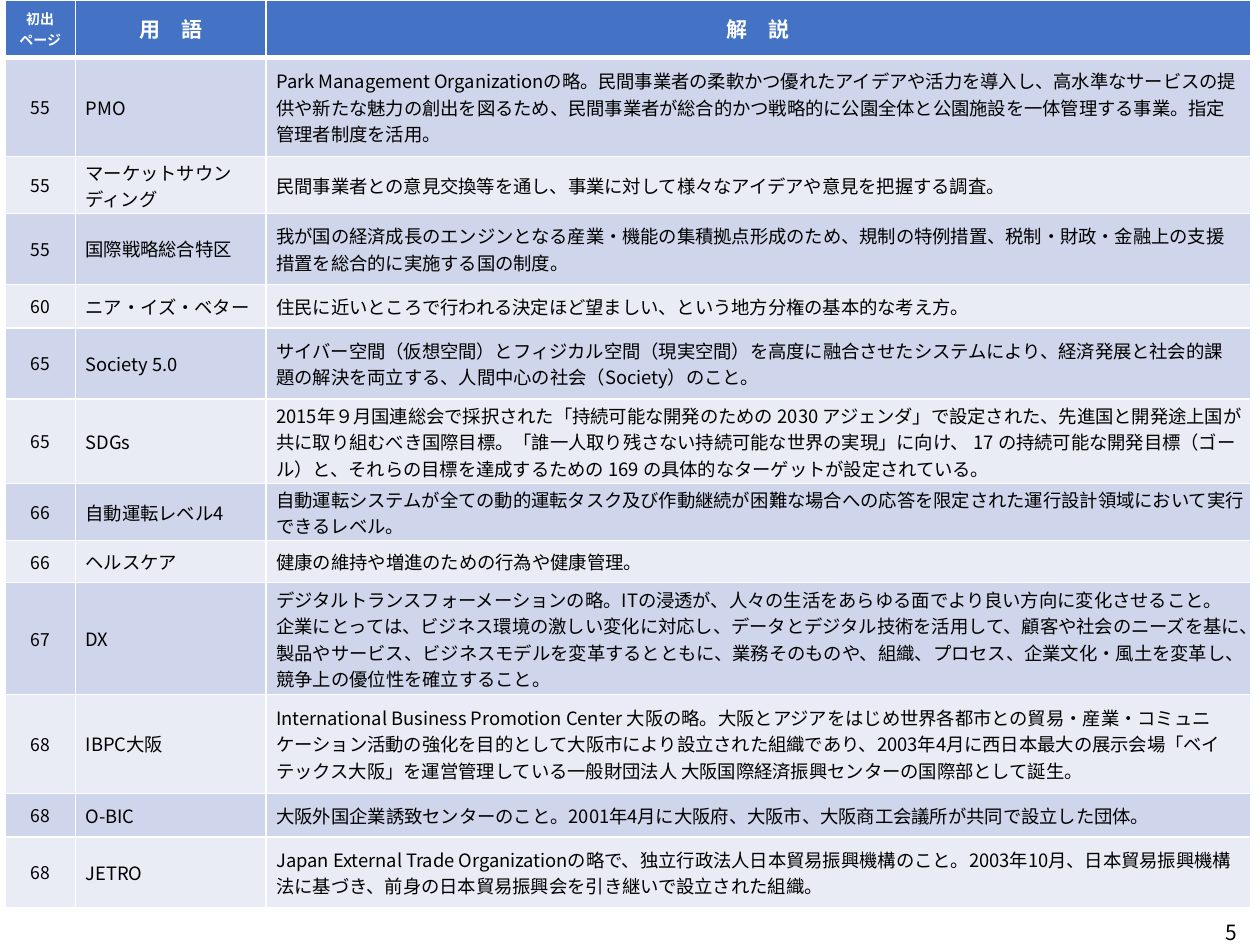
import dataclasses

import lxml.etree
import pptx
import pptx.dml.color
import pptx.enum.text
import pptx.oxml.ns
import pptx.util

Pt = pptx.util.Pt
Align = pptx.enum.text.PP_ALIGN
Anchor = pptx.enum.text.MSO_ANCHOR


@dataclasses.dataclass(frozen=True)
class Theme:
    font: str = "Noto Sans CJK JP"
    header_fill: str = "4472C4"
    bands: tuple = ("CFD5EA", "E9EBF5")
    light: str = "FFFFFF"
    dark: str = "000000"
    small_header: float = 8
    header: float = 12
    page: float = 10
    body: float = 10.5
    folio: float = 12


ROOMY = (6, 3.6, 7.2, 3.6)
SNUG = (6, 0.5, 6, 0)
TIGHT = (6, 0.5, 0.5, 0)
CENTRED = (7.2, 3.6, 7.2, 3.6)

COLUMN_WIDTHS = (40, 109, 562.5)
HEADER_HEIGHT = 33
HEADINGS = (("初出", "ページ"), ("用　語",), ("解　説",))

GLOSSARY = (
    (56.5, ROOMY, "55", "PMO",
     "Park Management Organizationの略。民間事業者の柔軟かつ優れたアイデアや活力を導入し、"
     "高水準なサービスの提供や新たな魅力の創出を図るため、民間事業者が総合的かつ戦略的に"
     "公園全体と公園施設を一体管理する事業。指定管理者制度を活用。"),
    (32.5, SNUG, "55", "マーケットサウンディング",
     "民間事業者との意見交換等を通し、事業に対して様々なアイデアや意見を把握する調査。"),
    (40.5, ROOMY, "55", "国際戦略総合特区",
     "我が国の経済成長のエンジンとなる産業・機能の集積拠点形成のため、規制の特例措置、"
     "税制・財政・金融上の支援措置を総合的に実施する国の制度。"),
    (25, ROOMY, "60", "ニア・イズ・ベター",
     "住民に近いところで行われる決定ほど望ましい、という地方分権の基本的な考え方。"),
    (40.5, ROOMY, "65", "Society 5.0",
     "サイバー空間（仮想空間）とフィジカル空間（現実空間）を高度に融合させたシステムにより、"
     "経済発展と社会的課題の解決を両立する、人間中心の社会（Society）のこと。"),
    (48.5, TIGHT, "65", "SDGs",
     "2015年９月国連総会で採択された「持続可能な開発のための 2030 アジェンダ」で設定された、"
     "先進国と開発途上国が共に取り組むべき国際目標。「誰一人取り残さない持続可能な世界の実現」に向け、"
     " 17 の持続可能な開発目標（ゴール）と、それらの目標を達成するための 169 の"
     "具体的なターゲットが設定されている。"),
    (32.5, TIGHT, "66", "自動運転レベル4",
     "自動運転システムが全ての動的運転タスク及び作動継続が困難な場合への応答を"
     "限定された運行設計領域において実行できるレベル。"),
    (24, TIGHT, "66", "ヘルスケア", "健康の維持や増進のための行為や健康管理。"),
    (64, SNUG, "67", "DX",
     "デジタルトランスフォーメーションの略。ITの浸透が、人々の生活をあらゆる面でより良い方向に"
     "変化させること。企業にとっては、ビジネス環境の激しい変化に対応し、データとデジタル技術を活用して、"
     "顧客や社会のニーズを基に、製品やサービス、ビジネスモデルを変革するとともに、業務そのものや、"
     "組織、プロセス、企業文化・風土を変革し、競争上の優位性を確立すること。"),
    (56.5, ROOMY, "68", "IBPC大阪",
     "International Business Promotion Center 大阪の略。大阪とアジアをはじめ世界各都市との"
     "貿易・産業・コミュニケーション活動の強化を目的として大阪市により設立された組織であり、"
     "2003年4月に西日本最大の展示会場「ベイテックス大阪」を運営管理している一般財団法人 "
     "大阪国際経済振興センターの国際部として誕生。"),
    (25, ROOMY, "68", "O-BIC",
     "大阪外国企業誘致センターのこと。2001年4月に大阪府、大阪市、大阪商工会議所が共同で設立した団体。"),
    (40.5, ROOMY, "68", "JETRO",
     "Japan External Trade Organizationの略で、独立行政法人日本貿易振興機構のこと。"
     "2003年10月、日本貿易振興機構法に基づき、前身の日本貿易振興会を引き継いで設立された組織。"),
)


class GlossarySlide:
    def __init__(self, slide, theme):
        self.slide = slide
        self.theme = theme

    def add_lines(self, frame, lines, size, color, align, bold=False):
        for number, line in enumerate(lines):
            paragraph = frame.add_paragraph() if number else frame.paragraphs[0]
            paragraph.alignment = align
            run = paragraph.add_run()
            run.text = line
            run.font.size = Pt(size)
            run.font.bold = bold
            run.font.name = self.theme.font
            run.font.color.rgb = pptx.dml.color.RGBColor.from_string(color)
            east_asian = lxml.etree.SubElement(
                run.font._element, pptx.oxml.ns.qn("a:ea"))
            east_asian.set("typeface", self.theme.font)

    def border(self, cell, widths):
        properties = cell._tc.get_or_add_tcPr()
        for position, (side, width) in enumerate(zip("LRTB", widths)):
            line = lxml.etree.Element(
                pptx.oxml.ns.qn(f"a:ln{side}"), w=str(Pt(width)))
            fill = lxml.etree.SubElement(line, pptx.oxml.ns.qn("a:solidFill"))
            lxml.etree.SubElement(
                fill, pptx.oxml.ns.qn("a:srgbClr"), val=self.theme.light)
            properties.insert(position, line)

    def cell(self, cell, lines, fill, margins, size, color, align, bold=False):
        cell.fill.solid()
        cell.fill.fore_color.rgb = pptx.dml.color.RGBColor.from_string(fill)
        cell.vertical_anchor = Anchor.MIDDLE
        (cell.margin_left, cell.margin_top,
         cell.margin_right, cell.margin_bottom) = map(Pt, margins)
        self.add_lines(cell.text_frame, lines, size, color, align, bold)
        self.border(cell, (1, 1, 1, 3 if bold else 1))

    def table(self, left, top, widths, header_height, headings, entries):
        theme = self.theme
        heights = [header_height] + [entry[0] for entry in entries]
        table = self.slide.shapes.add_table(
            len(heights), len(widths), Pt(left), Pt(top),
            Pt(sum(widths)), Pt(sum(heights))).table
        for column, width in zip(table.columns, widths):
            column.width = Pt(width)
        for row, height in zip(table.rows, heights):
            row.height = Pt(height)
        for column, lines in enumerate(headings):
            size = theme.header if column else theme.small_header
            self.cell(table.cell(0, column), lines, theme.header_fill,
                      CENTRED, size, theme.light, Align.CENTER, True)
        for row, (_, margins, *texts) in enumerate(entries, 1):
            band = theme.bands[(row - 1) % 2]
            for column, text in enumerate(texts):
                layout = ((margins, theme.body, theme.dark, Align.LEFT) if column
                          else (CENTRED, theme.page, theme.dark, Align.CENTER))
                self.cell(table.cell(row, column), [text], band, *layout)

    def page_number(self, number, left, top, width, height):
        frame = self.slide.shapes.add_textbox(
            Pt(left), Pt(top), Pt(width), Pt(height)).text_frame
        frame.word_wrap = True
        frame.vertical_anchor = Anchor.MIDDLE
        self.add_lines(frame, [number], self.theme.folio, self.theme.dark, Align.RIGHT)


def main():
    deck = pptx.Presentation()
    deck.slide_width, deck.slide_height = Pt(720), Pt(540)
    page = GlossarySlide(deck.slides.add_slide(deck.slide_layouts[6]), Theme())
    page.table(3, 0, COLUMN_WIDTHS, HEADER_HEIGHT, HEADINGS, GLOSSARY)
    page.page_number("5", 683.3, 521.3, 31, 22.3)
    deck.save("out.pptx")


if __name__ == "__main__":
    main()
